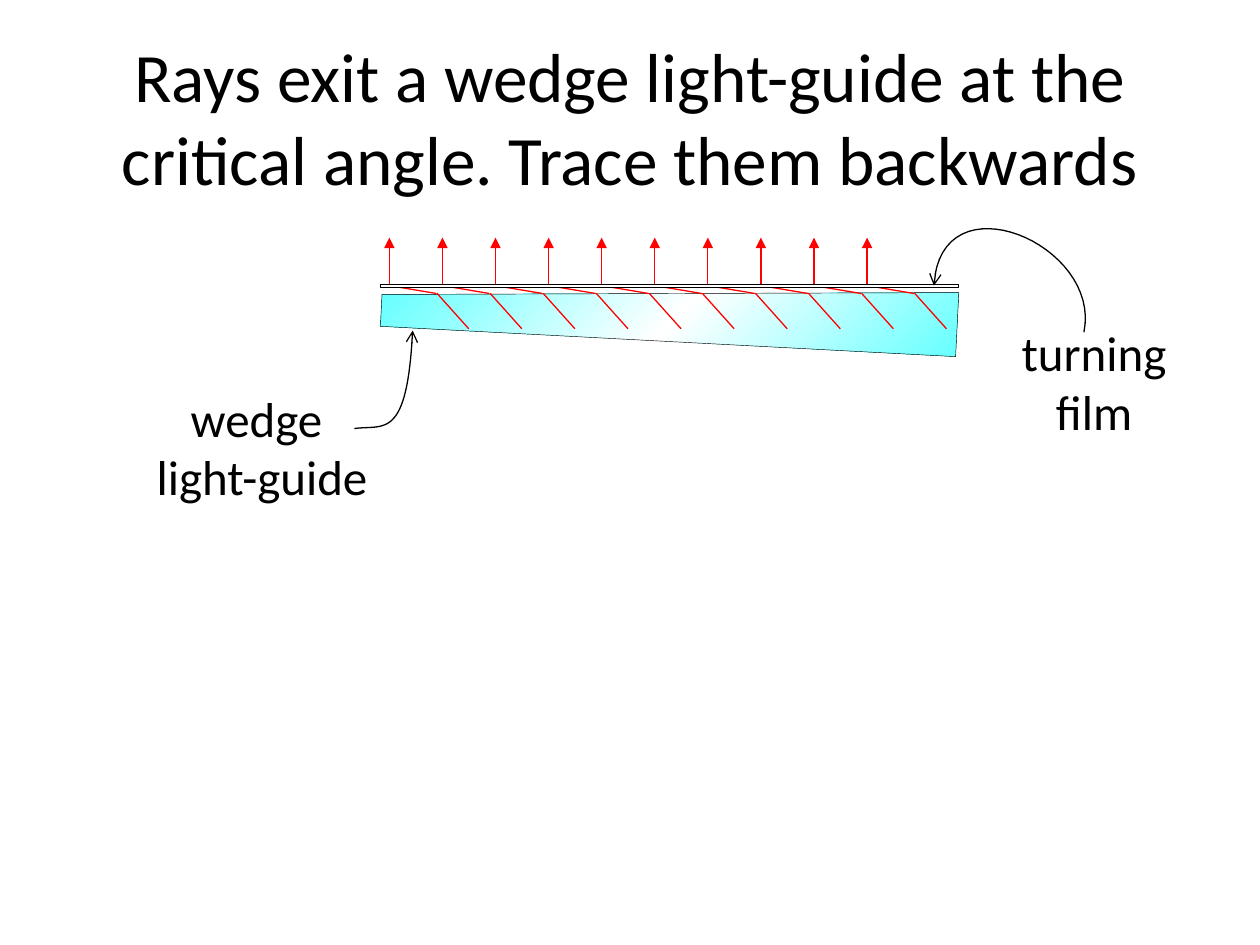
from copy import deepcopy
from dataclasses import dataclass

from lxml import etree
from pptx import Presentation
from pptx.dml.color import RGBColor
from pptx.enum.shapes import MSO_CONNECTOR, MSO_SHAPE
from pptx.enum.text import MSO_ANCHOR, PP_ALIGN
from pptx.oxml.ns import qn
from pptx.util import Pt

STRAIGHT = MSO_CONNECTOR.STRAIGHT
RECTANGLE = MSO_SHAPE.RECTANGLE
TOP, MIDDLE = MSO_ANCHOR.TOP, MSO_ANCHOR.MIDDLE
LEFT, CENTER = PP_ALIGN.LEFT, PP_ALIGN.CENTER

BLACK = RGBColor(0x00, 0x00, 0x00)
WHITE = RGBColor(0xFF, 0xFF, 0xFF)
RED = RGBColor(0xFF, 0x00, 0x00)
CYAN = RGBColor(0x66, 0xFF, 0xFF)

FONT = "Calibri"
LINE_WIDTH = 0.75
RAY_COUNT = 10
RAY_LEFT, RAY_PITCH = 222.5, 30.33
CURVE_STEPS = 32

Point = tuple[float, float]


@dataclass(frozen=True)
class Label:
    text: str
    left: float
    top: float
    width: float
    height: float
    size: float
    aligns: tuple[PP_ALIGN, ...]
    anchor: MSO_ANCHOR = TOP
    wrap: bool = True


@dataclass(frozen=True)
class Segment:
    start: Point
    end: Point
    head: str | None = None


@dataclass(frozen=True)
class Curve:
    start: Point
    control1: Point
    control2: Point
    end: Point

    def point(self, t: float) -> Point:
        u = 1 - t
        weights = (u**3, 3 * u * u * t, 3 * u * t * t, t**3)
        points = (self.start, self.control1, self.control2, self.end)
        x, y = (sum(w * pt[i] for w, pt in zip(weights, points)) for i in (0, 1))
        return x, y


LABELS = [
    Label("Rays exit a wedge light-guide at the critical angle. Trace them backwards",
          36, 21.6, 648, 90, 39.6, (CENTER,), MIDDLE),
    Label("turning\nfilm", 576.7, 180.7, 97.9, 75, 28, (LEFT, CENTER), wrap=False),
    Label("wedge \nlight-guide", 68.4, 218.2, 162.7, 75, 28, (CENTER, CENTER)),
]

RAY_PARTS = [
    Segment((45.4, 187.9), (27.2, 167.6)),
    Segment((26.8, 167.7), (0, 163.2)),
    Segment((0, 163), (0, 135.8), "triangle"),
]

WEDGE = [(217.4, 186.5), (218.3, 168.3), (547.9, 167.2), (546.1, 203.8)]

POINTERS = [
    Curve((619.4, 189.9), (630, 139.7), (537.1, 100.1), (533.7, 163.3)),
    Curve((202.5, 244.9), (219.6, 242.6), (232.6, 252), (235.8, 188.9)),
]


def add_label(s, label: Label) -> None:
    box = s.shapes.add_textbox(Pt(label.left), Pt(label.top), Pt(label.width), Pt(label.height))
    tf = box.text_frame
    tf.text = label.text
    tf.word_wrap = label.wrap
    tf.vertical_anchor = label.anchor
    for p, align in zip(tf.paragraphs, label.aligns):
        p.alignment = align
        for r in p.runs:
            r.font.name = FONT
            r.font.size = Pt(label.size)
            r.font.color.rgb = BLACK


def style_line(shape, color: RGBColor, width: float, head: str | None = None) -> None:
    shape.line.color.rgb = color
    shape.line.width = Pt(width)
    if head:
        ln = shape.line._get_or_add_ln()
        etree.SubElement(ln, qn("a:tailEnd"), type=head)


def add_segment(s, segment: Segment, dx: float) -> None:
    (x1, y1), (x2, y2) = segment.start, segment.end
    line = s.shapes.add_connector(STRAIGHT, Pt(x1 + dx), Pt(y1), Pt(x2 + dx), Pt(y2))
    style_line(line, RED, LINE_WIDTH, segment.head)
    etree.SubElement(line._element.spPr, qn("a:effectLst"))


def add_outline(s, points: list[Point], close: bool):
    start, *rest = [(Pt(x), Pt(y)) for x, y in points]
    builder = s.shapes.build_freeform(*start)
    builder.add_line_segments(rest, close=close)
    sp = builder.convert_to_shape()
    sp.shadow.inherit = False
    return sp


def add_wedge(s) -> None:
    sp = add_outline(s, WEDGE, True)
    fill = sp.fill
    fill.gradient()
    fill.gradient_angle = 315
    stops = sp._element.spPr.find(f".//{qn('a:gsLst')}")
    stops.append(deepcopy(stops[-1]))
    for stop, position, color in zip(fill.gradient_stops, (0, 0.5, 1), (CYAN, WHITE, CYAN)):
        stop.position = position
        stop.color.rgb = color
    style_line(sp, BLACK, 0.25)


def add_film(s) -> None:
    sp = s.shapes.add_shape(RECTANGLE, Pt(217.4), Pt(162.7), Pt(330.5), Pt(1.5))
    sp.shadow.inherit = False
    sp.fill.solid()
    sp.fill.fore_color.rgb = WHITE
    style_line(sp, BLACK, LINE_WIDTH)


def add_pointer(s, curve: Curve) -> None:
    points = [curve.point(i / CURVE_STEPS) for i in range(CURVE_STEPS + 1)]
    sp = add_outline(s, points, False)
    sp.fill.background()
    style_line(sp, BLACK, LINE_WIDTH, "arrow")


def main() -> None:
    prs = Presentation()
    prs.slide_width, prs.slide_height = Pt(720), Pt(540)
    s = prs.slides.add_slide(prs.slide_layouts[6])
    add_wedge(s)
    for part in RAY_PARTS:
        for i in range(RAY_COUNT):
            add_segment(s, part, RAY_LEFT + i * RAY_PITCH)
    add_film(s)
    for curve in POINTERS:
        add_pointer(s, curve)
    for label in LABELS:
        add_label(s, label)
    prs.save("out.pptx")


if __name__ == "__main__":
    main()
